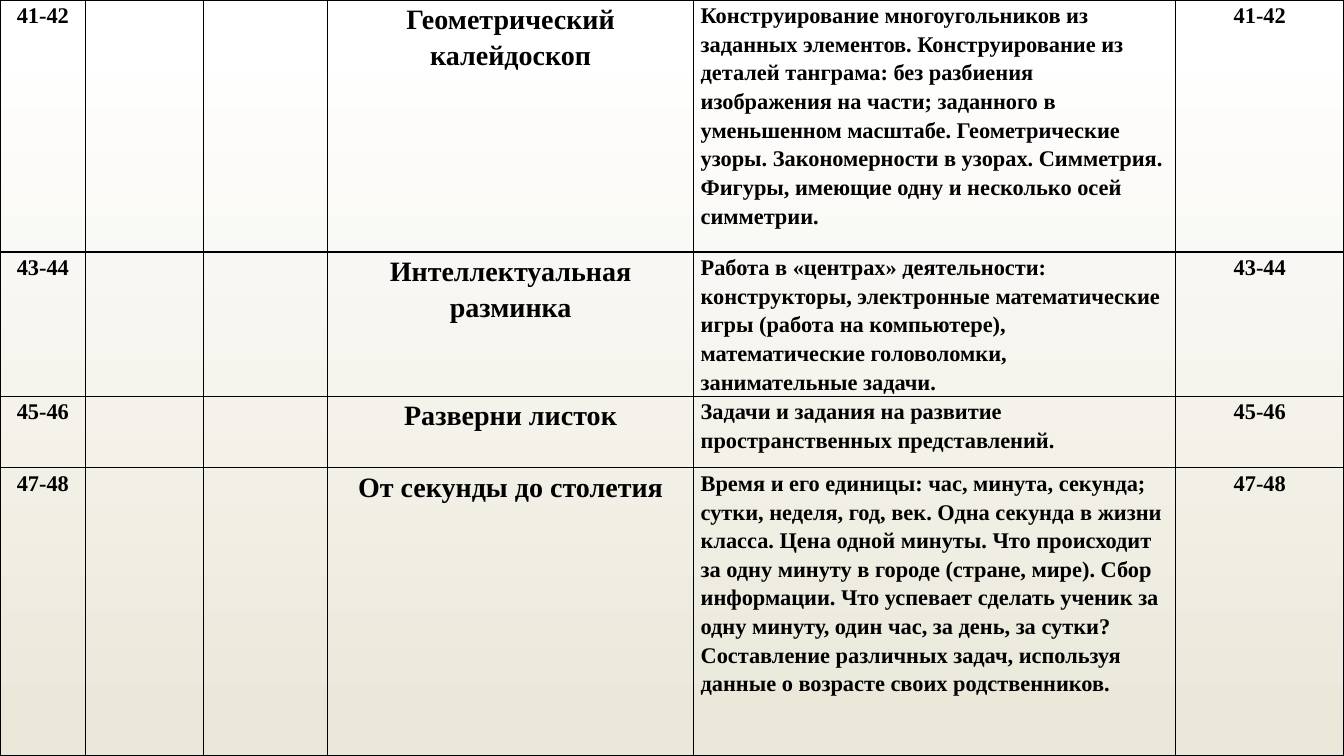
from dataclasses import dataclass

from lxml import etree
from pptx import Presentation, util as u
from pptx.dml.color import RGBColor
from pptx.enum import text
from pptx.oxml import ns
from pptx.table import _Cell

COLORS = {"ink": "000000", "bg_top": "FFFFFF", "bg_bottom": "EAE7D8"}
FONT = "Times New Roman"
COL_WIDTHS = [0.85, 1.17, 1.23, 3.63, 4.78, 1.67]


@dataclass
class Lesson:
    number: str
    topic: str
    content: str
    height: float


LESSONS = [
    Lesson("41-42", "Геометрический калейдоскоп",
           "Конструирование многоугольников из заданных элементов. "
           "Конструирование из деталей танграма: без разбиения изображения на части; "
           "заданного в уменьшенном масштабе. Геометрические узоры. "
           "Закономерности в узорах. Симметрия. "
           "Фигуры, имеющие одну и несколько осей симметрии.", 2.5),
    Lesson("43-44", "Интеллектуальная разминка",
           "Работа в «центрах» деятельности: конструкторы, электронные "
           "математические игры (работа на компьютере), "
           "математические головоломки, занимательные задачи.", 1.43),
    Lesson("45-46", "Разверни листок",
           "Задачи и задания на развитие пространственных представлений.", 0.71),
    Lesson("47-48", "От секунды до столетия",
           "Время и его единицы: час, минута, секунда; сутки, неделя, год, век. "
           "Одна секунда в жизни класса. Цена одной минуты. "
           "Что происходит за одну минуту в городе (стране, мире). Сбор информации. "
           "Что успевает сделать ученик за одну минуту, один час, за день, за сутки? "
           "Составление различных задач, используя данные "
           "о возрасте своих родственников.", 2.86),
]


def rgb(name: str) -> RGBColor:
    return RGBColor.from_string(COLORS[name])


def style_cell(cell: _Cell) -> None:
    """Black 1 pt borders, no fill, narrow side margins."""
    tc_pr = cell._tc.get_or_add_tcPr()
    for side in ("lnL", "lnR", "lnT", "lnB"):
        ln = etree.SubElement(tc_pr, ns.qn(f"a:{side}"), w=str(u.Pt(1)))
        fill = etree.SubElement(ln, ns.qn("a:solidFill"))
        etree.SubElement(fill, ns.qn("a:srgbClr"), val=COLORS["ink"])
    cell.fill.background()
    cell.margin_left = cell.margin_right = u.Inches(0.07)
    cell.margin_top = cell.margin_bottom = 0


def write_cell(cell: _Cell, words: str, size: int, align: text.PP_ALIGN) -> None:
    p = cell.text_frame.paragraphs[0]
    p.text = words
    p.alignment = align
    p.line_spacing = 1.15
    p.space_after = u.Pt(10)
    p.font.name = FONT
    p.font.size = u.Pt(size)
    p.font.bold = True
    p.font.color.rgb = rgb("ink")


def main() -> None:
    prs = Presentation()
    prs.slide_width, prs.slide_height = u.Inches(13.33), u.Inches(7.5)
    s = prs.slides.add_slide(prs.slide_layouts[6])

    # Background: light at the top, sand at the bottom
    bg = s.background.fill
    bg.gradient()
    bg.gradient_angle = 270
    stops = [("bg_top", 0.05), ("bg_bottom", 1)]
    for stop, (name, position) in zip(bg.gradient_stops, stops):
        stop.color.rgb = rgb(name)
        stop.position = position

    # Lesson table
    height = sum(lesson.height for lesson in LESSONS)
    tbl = s.shapes.add_table(len(LESSONS), len(COL_WIDTHS), 0, 0,
                             u.Inches(sum(COL_WIDTHS)), u.Inches(height)).table
    tbl.first_row = tbl.horz_banding = False
    for col, width in zip(tbl.columns, COL_WIDTHS):
        col.width = u.Inches(width)
    for cell in tbl.iter_cells():
        style_cell(cell)

    # Lesson text
    center, left = text.PP_ALIGN.CENTER, text.PP_ALIGN.LEFT
    for row, lesson in zip(tbl.rows, LESSONS):
        row.height = u.Inches(lesson.height)
        write_cell(row.cells[0], lesson.number, 16, center)
        write_cell(row.cells[3], lesson.topic, 20, center)
        write_cell(row.cells[4], lesson.content, 16, left)
        write_cell(row.cells[5], lesson.number, 16, center)

    prs.save("out.pptx")


if __name__ == "__main__":
    main()
